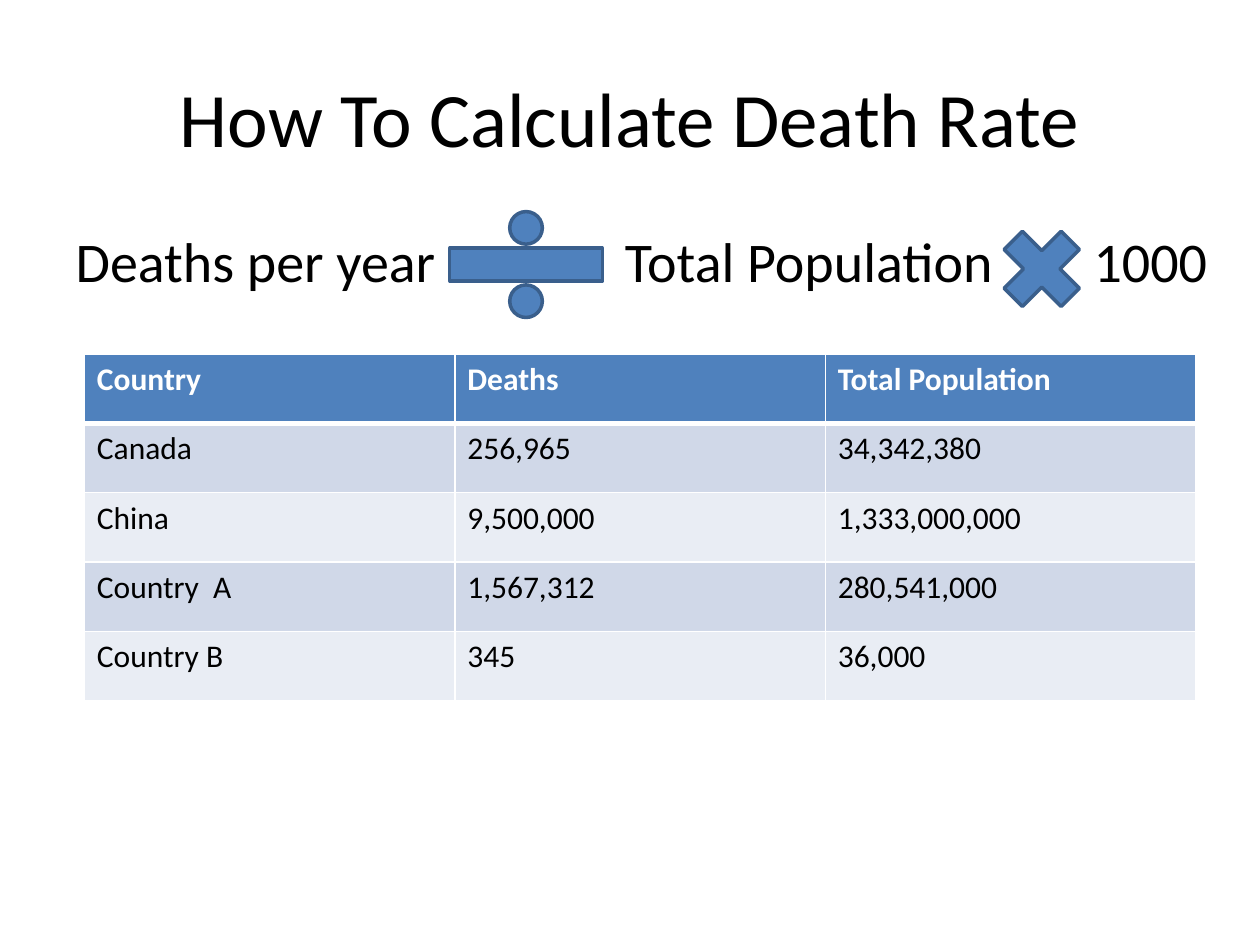
from lxml import etree
from pptx import Presentation
from pptx.dml.color import RGBColor
from pptx.enum import shapes, text
from pptx.oxml.ns import qn
from pptx.util import Pt

COLORS = {
    "text": "000000", "white": "FFFFFF", "accent": "4F81BD",
    "outline": "3A5F8C", "band_dark": "D0D8E8", "band_light": "E9EDF4",
}
ROWS = [
    ("Country", "Deaths", "Total Population"),
    ("Canada", "256,965", "34,342,380"),
    ("China", "9,500,000", "1,333,000,000"),
    ("Country  A", "1,567,312", "280,541,000"),
    ("Country B", "345", "36,000"),
]


def color(name):
    return RGBColor.from_string(COLORS[name])


def write(frame, content, size=18, fill="text", bold=False, align=None):
    """Write one formatted paragraph and return it."""
    paragraph = frame.paragraphs[0]
    paragraph.alignment = align
    run = paragraph.add_run()
    run.text = content
    run.font.name = "Calibri"
    run.font.size = Pt(size)
    run.font.bold = bold
    run.font.color.rgb = color(fill)
    return paragraph


def set_border(cell, sides):
    """Draw white cell borders; sides maps L, R, T, B to a width in points."""
    properties = cell._tc.get_or_add_tcPr()
    for index, (side, width) in enumerate(sides.items()):
        line = etree.Element(qn(f"a:ln{side}"), w=str(Pt(width)))
        solid = etree.SubElement(line, qn("a:solidFill"))
        etree.SubElement(solid, qn("a:srgbClr"), val=COLORS["white"])
        properties.insert(index, line)


class SlideBuilder:
    def __init__(self, presentation):
        self.slide = presentation.slides.add_slide(presentation.slide_layouts[1])

    def place(self, shape, left, top, width, height):
        shape.left, shape.top = Pt(left), Pt(top)
        shape.width, shape.height = Pt(width), Pt(height)

    def title(self, content, *box):
        shape = self.slide.shapes.title
        self.place(shape, *box)
        shape.text_frame.vertical_anchor = text.MSO_ANCHOR.MIDDLE
        write(shape.text_frame, content, size=44, align=text.PP_ALIGN.CENTER)

    def write_term(self, shape, content):
        shape.text_frame.auto_size = text.MSO_AUTO_SIZE.NONE
        paragraph = write(shape.text_frame, content, size=32)
        paragraph.space_before = Pt(1.6)
        return paragraph

    def body_term(self, content, *box):
        shape = self.slide.placeholders[1]
        self.place(shape, *box)
        paragraph = self.write_term(shape, content)
        properties = paragraph._p.get_or_add_pPr()
        properties.set("marL", "0")
        properties.set("indent", "0")
        etree.SubElement(properties, qn("a:buNone"))

    def term(self, content, *box):
        shape = self.slide.shapes.add_textbox(*map(Pt, box))
        shape.text_frame.word_wrap = True
        self.write_term(shape, content)

    def operator(self, kind, *box):
        shape = self.slide.shapes.add_shape(kind, *map(Pt, box))
        shape.shadow.inherit = False
        shape.fill.solid()
        shape.fill.fore_color.rgb = color("accent")
        shape.line.color.rgb = color("outline")
        shape.line.width = Pt(2)

    def table(self, rows, left, top, column_width, row_height):
        count = len(rows[0])
        table = self.slide.shapes.add_table(
            len(rows), count, Pt(left), Pt(top),
            Pt(column_width * count), Pt(row_height * len(rows))).table
        for column in table.columns:
            column.width = Pt(column_width)
        for r, values in enumerate(rows):
            header = r == 0
            band = "accent" if header else ("band_light", "band_dark")[r % 2]
            table.rows[r].height = Pt(row_height)
            for c, value in enumerate(values):
                cell = table.cell(r, c)
                cell.fill.solid()
                cell.fill.fore_color.rgb = color(band)
                write(cell.text_frame, value, bold=header,
                      fill="white" if header else "text")
                set_border(cell, {"L": 1, "R": 1, "T": 3 if r == 1 else 1,
                                  "B": 3 if header else 1})


def main():
    presentation = Presentation()
    presentation.slide_width, presentation.slide_height = Pt(720), Pt(540)
    builder = SlideBuilder(presentation)

    # Title
    builder.title("How To Calculate Death Rate", 36, 21.6, 648, 90)

    # Formula terms
    builder.body_term("Deaths per year", 36, 126, 664, 356.4)
    builder.term("Total Population", 350, 126, 230, 48)
    builder.term("1000", 617.8, 126, 90, 48)

    # Operators between the terms
    builder.operator(shapes.MSO_SHAPE.MATH_DIVIDE, 241.2, 111.6, 118.8, 79.2)
    builder.operator(shapes.MSO_SHAPE.MATH_MULTIPLY, 564, 122.4, 62.6, 62.6)

    # Data table
    builder.table(ROWS, 48.2, 202.2, 211.7, 39.7)

    presentation.save("out.pptx")


if __name__ == "__main__":
    main()
